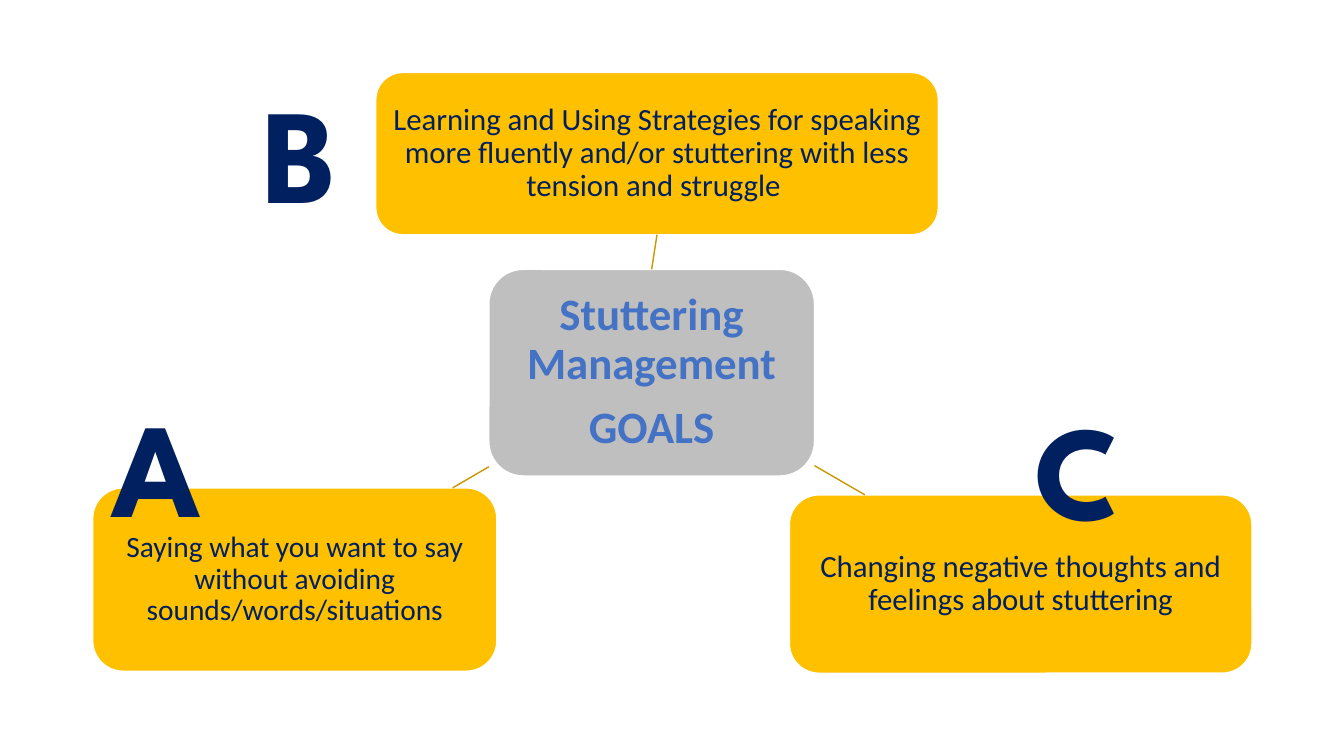
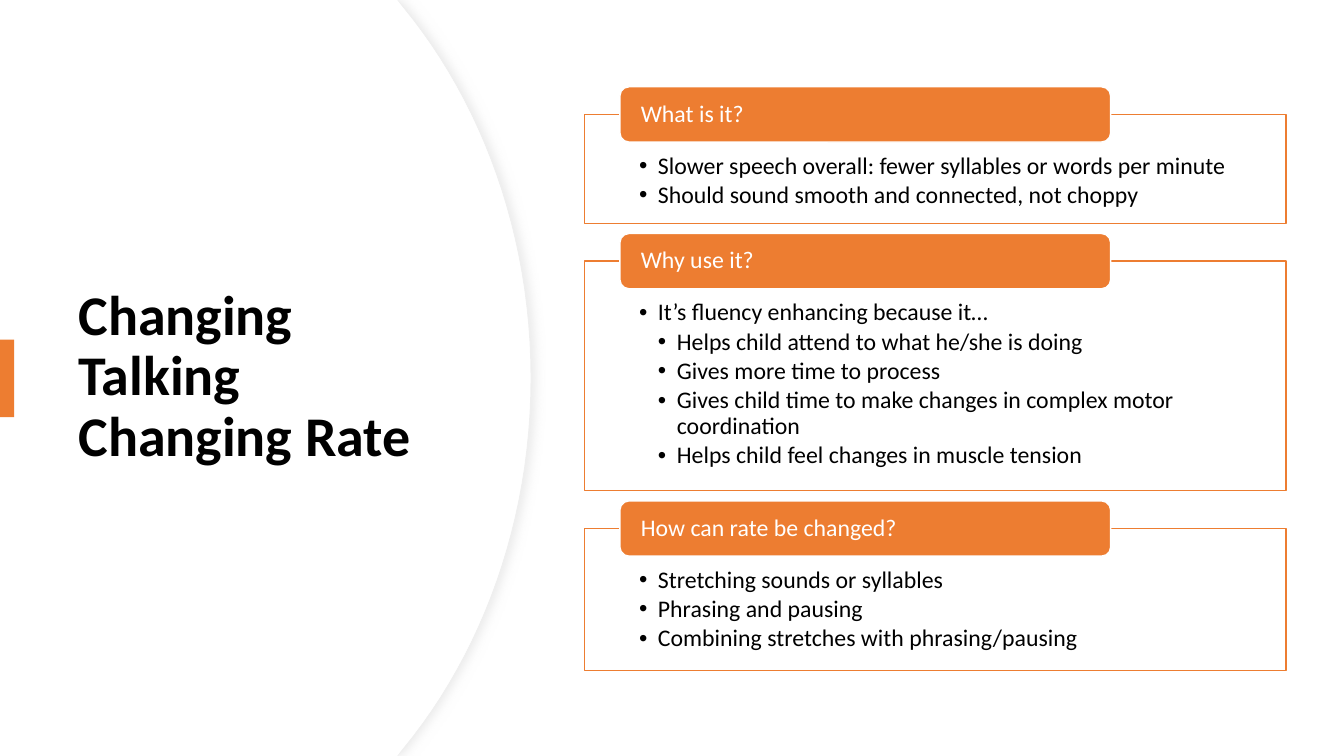
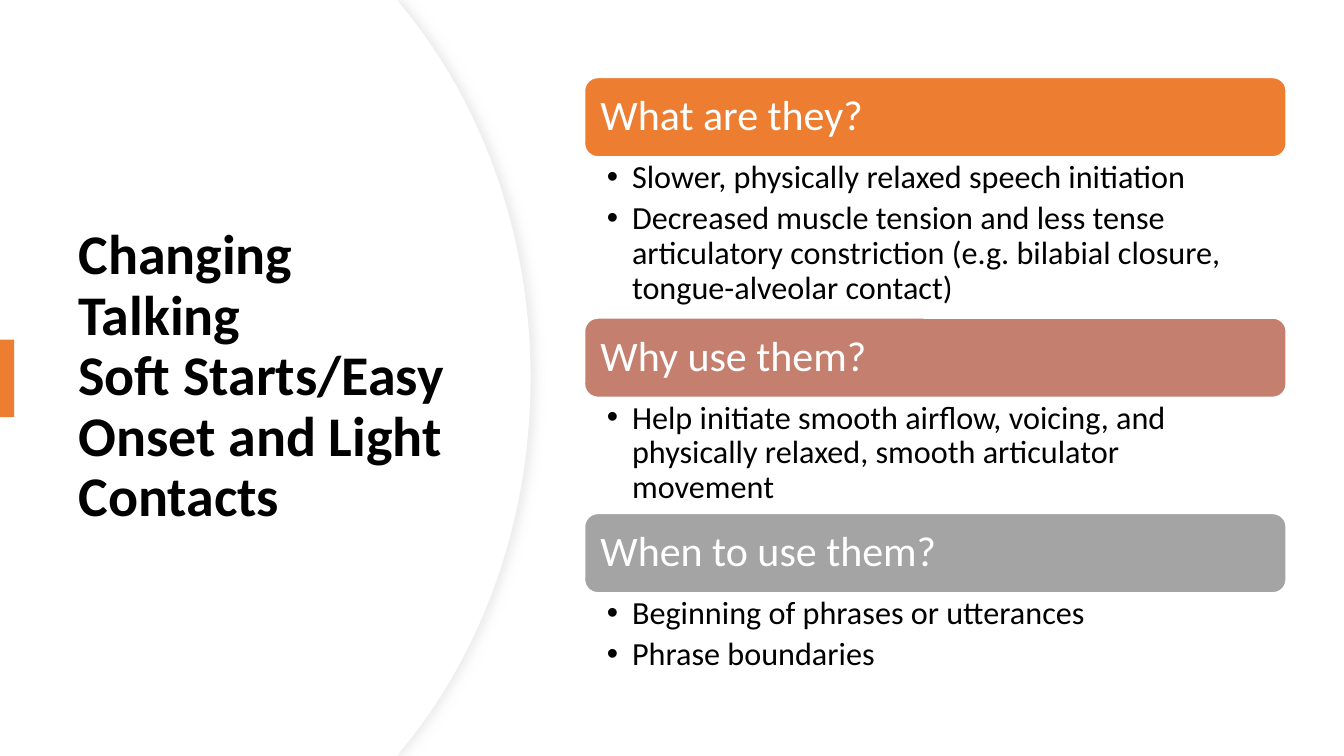
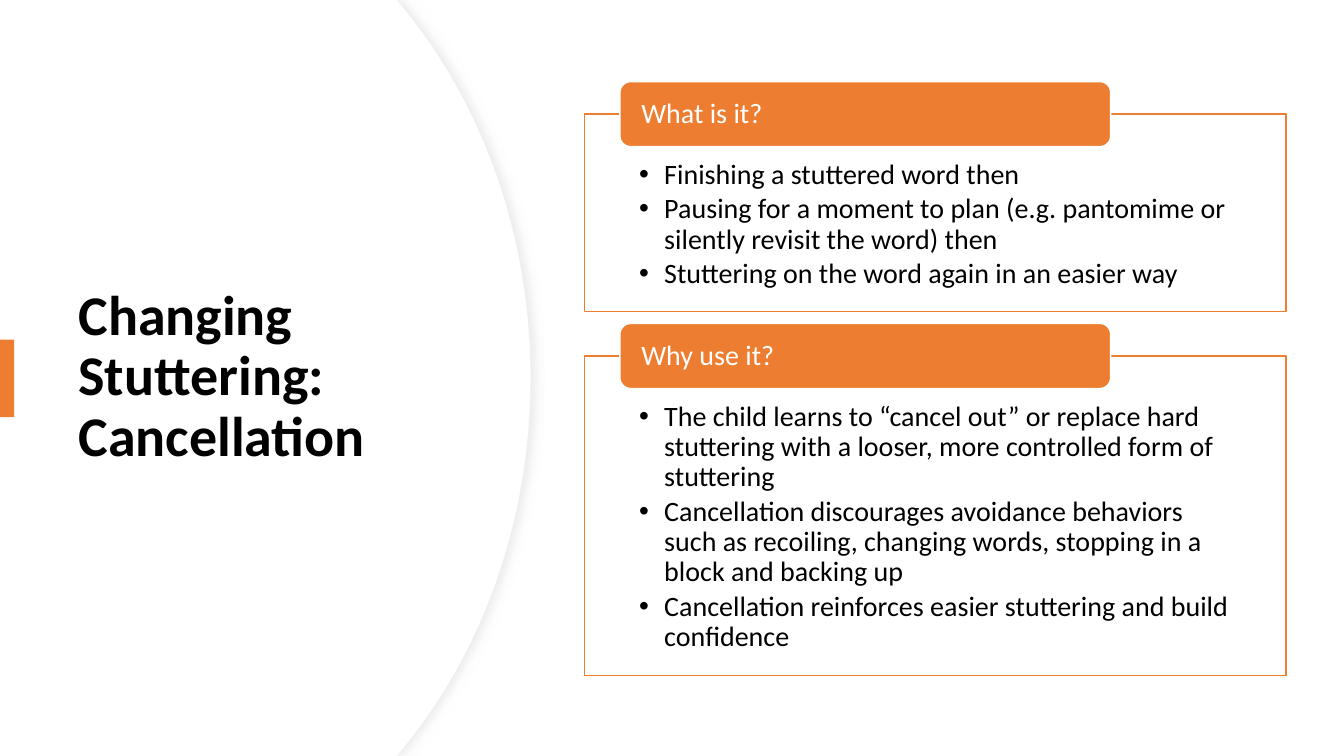
from lxml import etree
from pptx import Presentation
from pptx import util as u
from pptx.dml import color as col
from pptx.enum import shapes as sh, text as tx
from pptx.oxml import ns

Pt = u.Pt
GOLD, NAVY, GRAY, BLUE = "FFC000", "002060", "BFBFBF", "4472C4"
ORANGE, ROSE, STONE = "ED7D31", "C47F6E", "A4A4A4"
WHITE, BLACK, EDGE, WIRE, SHADE = "FFFFFF", "000000", "EFEFEF", "CA9700", "D8D8D8"
WIDE, TALL = 960, 540
LEFT, SPAN = 417.6, 501.1
ROUND, RECT = sh.MSO_SHAPE.ROUNDED_RECTANGLE, sh.MSO_SHAPE.RECTANGLE
MID, TOP = tx.MSO_ANCHOR.MIDDLE, tx.MSO_ANCHOR.TOP


def rgb(code):
    """Turn a hex string into a colour."""
    return col.RGBColor.from_string(code)


def put(item, vals):
    """Set each attribute of an item from a dict."""
    for name, val in vals.items():
        setattr(item, name, val)


def sub(node, tag, **vals):
    """Add an XML child with its attributes."""
    return etree.SubElement(node, ns.qn(tag), vals)


def bow(ends, steps=24):
    """List the points along a cubic curve."""
    rule = lambda t: ((1 - t) ** 3, 3 * t * (1 - t) ** 2, 3 * t * t * (1 - t), t ** 3)
    return [tuple(sum(w * e[k] for w, e in zip(rule(i / steps), ends)) for k in (0, 1))
            for i in range(steps + 1)]


class Deck:
    """Hold the style and the current slide."""

    def __init__(self):
        """Start an empty wide deck."""
        self.prs = Presentation()
        put(self.prs, {"slide_width": Pt(WIDE), "slide_height": Pt(TALL)})
        self.face = "Calibri"

    def page(self):
        """Add a blank slide and draw on it from now on."""
        self.art = self.prs.slides.add_slide(self.prs.slide_layouts[6]).shapes

    def paint(self, item, fill, line=None, wide=1):
        """Give a shape its fill and outline without a shadow."""
        item.shadow.inherit = False
        item.fill.solid()
        item.fill.fore_color.rgb = rgb(fill)
        if line:
            item.line.color.rgb = rgb(line)
            item.line.width = Pt(wide)
        else:
            item.line.fill.background()

    def box(self, area, fill, line=None, kind=ROUND):
        """Draw a preset shape."""
        item = self.art.add_shape(kind, *map(Pt, area))
        self.paint(item, fill, line)
        return item

    def label(self, area):
        """Add an empty text box."""
        return self.art.add_textbox(*map(Pt, area))

    def say(self, item, rows, size, ink, ins, anchor=MID, side="LEFT",
            gap=0, hang=0, lead=0.9, bold=False, face=None):
        """Fill a shape with paragraphs, bulleted where hang is set."""
        frame = item.text_frame
        put(frame, {"word_wrap": True, "vertical_anchor": anchor})
        edges = ("margin_left", "margin_top", "margin_right", "margin_bottom")
        put(frame, dict(zip(edges, map(Pt, ins))))
        for i, row in enumerate(rows):
            para = frame.add_paragraph() if i else frame.paragraphs[0]
            words, depth = row if isinstance(row, tuple) else (row, 1)
            para.text = words
            put(para, {"alignment": getattr(tx.PP_ALIGN, side), "line_spacing": lead})
            if i:
                para.space_before = Pt(gap)
            if hang:
                para.level = depth
                props = para._p.get_or_add_pPr()
                props.set("marL", str(Pt(hang * depth)))
                props.set("indent", str(-Pt(hang)))
                sub(props, "a:buFont", typeface="Arial")
                sub(props, "a:buChar", char="•")
            for run in para.runs:
                put(run.font, {"name": face or self.face, "size": Pt(size), "bold": bold})
                run.font.color.rgb = rgb(ink)

    def wire(self, ends, start=None, stop=None):
        """Draw a thin line, joined to shapes where given."""
        item = self.art.add_connector(sh.MSO_CONNECTOR.STRAIGHT, *map(Pt, ends))
        if start:
            item.begin_connect(*start)
        if stop:
            item.end_connect(*stop)
        item.line.color.rgb = rgb(WIRE)
        item.line.width = Pt(1)
        sub(item._element.spPr, "a:effectLst")

    def dome(self, shift, line=None):
        """Draw the bulging panel on the left."""
        half = bow([(288.7, 5.8), (344.2, 73.4), (379.4, 167), (379.4, 270)])
        arc = [(x - shift, y) for x, y in half]
        arc += [(x, TALL - y) for x, y in arc[-2::-1]]
        pts = [(283.7, 0), *arc, (283.7, TALL), (0, TALL)]
        pen = self.art.build_freeform(0, 0)
        pen.add_line_segments([(Pt(x), Pt(y)) for x, y in pts], close=True)
        item = pen.convert_to_shape()
        self.paint(item, WHITE, line, 0.75)
        return item

    def topic(self, title):
        """Start a slide with the domed title panel."""
        self.page()
        effects = self.dome(0, EDGE)._element.spPr.find(ns.qn("a:effectLst"))
        cast = sub(effects, "a:outerShdw", blurRad=str(Pt(7)), dist=str(Pt(3)), dir="0",
                   algn="l", rotWithShape="0")
        sub(sub(cast, "a:srgbClr", val=SHADE), "a:alpha", val="50000")
        self.dome(0.7)
        self.say(self.label((49, 91.4, 283.7, 356.4)), [title], 40, BLACK,
                 (7.2, 3.6, 7.2, 3.6), bold=True)
        self.box((0, 242.6, 10.1, 55.4), ORANGE, kind=RECT)

    def panels(self, top, size, hang, parts):
        """Stack outlined panels with a tab on each upper edge."""
        tab = 2.325 * size
        for head, high, rows in parts:
            edge = top + tab / 2
            body = self.box((LEFT, edge, SPAN, high), WHITE, ORANGE, RECT)
            self.say(body, rows, size, BLACK, (38.9, 1.65 * size, 38.9, 0.5 * size),
                     TOP, gap=0.15 * size, hang=hang)
            flag = self.box((442.8, top, 350.6, tab), ORANGE, WHITE)
            self.say(flag, [head], size, WHITE, (13, 0, 13, 0))
            top = edge + high + 0.425 * size

    def bands(self, top, parts):
        """Stack full-width bands with bullets under each."""
        tab = 56.6
        for head, fill, high, rows in parts:
            band = self.box((LEFT, top, SPAN, tab), fill, WHITE)
            self.say(band, [head], 30, WHITE, (8.6,) * 4)
            self.say(self.label((LEFT, top + tab, SPAN, high)), rows, 23, BLACK,
                     (15.9, 2.9, 16.4, 2.9), TOP, gap=4.6, hang=18)
            top += tab + high


def goals(deck):
    """Draw the hub with its three goals."""
    deck.page()
    hub = deck.box((349.2, 192.4, 232.6, 147.6), GRAY, WHITE)
    deck.say(hub, ["Stuttering Management", "GOALS"], 32, BLUE, (6.5,) * 4,
             side="CENTER", gap=11.2, bold=True)
    aims = [
        ("B", (180.7, 46), (268.4, 51.8, 401.8, 115.9), 22,
         "Learning and Using Strategies for speaking more fluently and/or "
         "stuttering with less tension and struggle "),
        ("C", (732.2, 272.2), (563.8, 353.5, 330.5, 127.4), 22,
         "Changing negative thoughts and feelings about stuttering"),
        ("A", (72.7, 270), (66.2, 348.5, 288.7, 131), 21,
         "Saying what you want to say without avoiding sounds/words/situations"),
    ]
    cards = {}
    for mark, spot, area, size, words in aims:
        cards[mark] = deck.box(area, GOLD, WHITE)
        deck.say(cards[mark], [words], size, NAVY, (4.3,) * 4, side="CENTER")
    for mark, spot, *rest in aims:
        deck.say(deck.label((*spot, 97.9, 123.8)), [mark], 96, NAVY,
                 (7.2, 3.6, 7.2, 3.6), TOP, lead=1, bold=True, face="League Spartan")
    deck.wire((465.5, 192.4, 469.3, 167.7), (hub, 0), (cards["B"], 2))
    deck.wire((581.8, 332.6, 617.8, 353.5))
    deck.wire((349.2, 333.4, 323.3, 348.5))


def main():
    """Build and save the deck."""
    deck = Deck()
    goals(deck)
    deck.topic("Changing Talking \vChanging Rate")
    deck.panels(62, 17, 13.5, [
        ("What is it?", 77.8, [
            "Slower speech overall: fewer syllables or words per minute",
            "Should sound smooth and connected, not choppy"]),
        ("Why use it?", 164, [
            "It’s fluency enhancing because it…",
            ("Helps child attend to what he/she is doing", 2),
            ("Gives more time to process", 2),
            ("Gives child time to make changes in complex motor coordination", 2),
            ("Helps child feel changes in muscle tension", 2)]),
        ("How can rate be changed?", 101.5, [
            "Stretching sounds or syllables",
            "Phrasing and pausing",
            "Combining stretches with phrasing/pausing"]),
    ])
    deck.topic("Changing Talking\vSoft Starts/Easy Onset and Light Contacts")
    deck.bands(55.4, [
        ("What are they?", ORANGE, 115.2, [
            "Slower, physically relaxed speech initiation",
            "Decreased muscle tension and less tense articulatory constriction "
            "(e.g. bilabial closure, tongue-alveolar contact)"]),
        ("Why use them?", ROSE, 83, [
            "Help initiate smooth airflow, voicing, and physically relaxed, "
            "smooth articulator movement"]),
        ("When to use them?", STONE, 62.6, [
            "Beginning of phrases or utterances",
            "Phrase boundaries"]),
    ])
    deck.topic("Changing Stuttering: Cancellation")
    deck.panels(58.3, 20, 18, [
        ("What is it?", 141, [
            "Finishing a stuttered word then",
            "Pausing for a moment to plan (e.g. pantomime or silently revisit the word) then",
            "Stuttering on the word again in an easier way"]),
        ("Why use it?", 228.2, [
            "The child learns to “cancel out” or replace hard stuttering with a looser, "
            "more controlled form of stuttering",
            "Cancellation discourages avoidance behaviors such as recoiling, "
            "changing words, stopping in a block and backing up",
            "Cancellation reinforces easier stuttering and build confidence"]),
    ])
    deck.prs.save("out.pptx")


if __name__ == "__main__":
    main()
